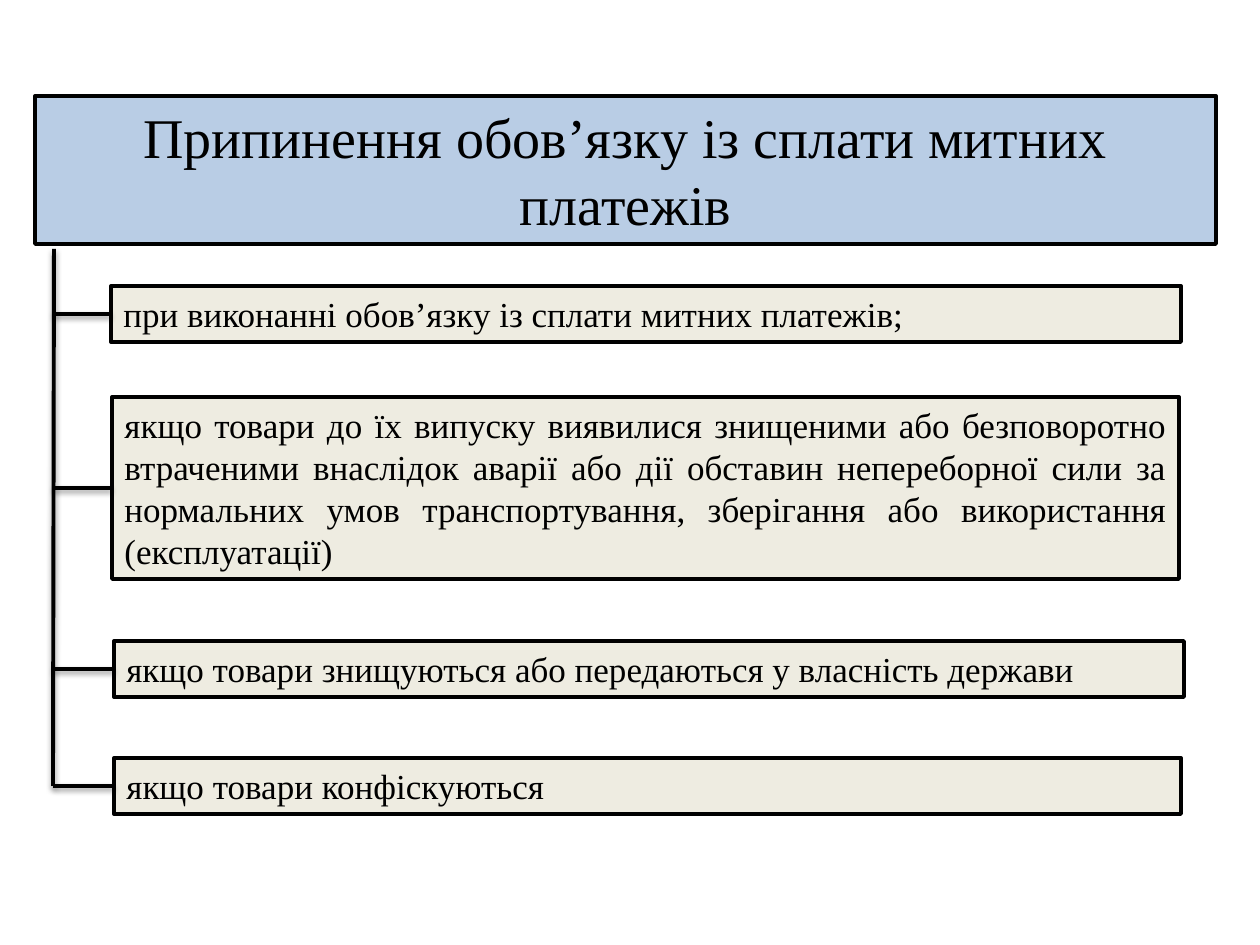
"""Build the slide on how the duty to pay customs charges ends."""
from dataclasses import dataclass

from pptx import Presentation
from pptx import util as u
from pptx.dml import color
from pptx.enum import shapes, text

PX = 914400 / 126


@dataclass(frozen=True)
class Theme:
    font: str = "Times New Roman"
    ink: str = "000000"
    heading_fill: str = "B9CDE5"
    case_fill: str = "EEECE1"
    heading_size: int = 32
    case_size: int = 20
    line_width: float = 2.25


def px(*lengths):
    return [u.Emu(round(length * PX)) for length in lengths]


def rgb(code):
    return color.RGBColor.from_string(code)


def write(frame, wording, *, font, size, ink, align):
    frame.word_wrap = True
    frame.auto_size = text.MSO_AUTO_SIZE.SHAPE_TO_FIT_TEXT
    frame.vertical_anchor = text.MSO_ANCHOR.TOP
    paragraph = frame.paragraphs[0]
    paragraph.alignment = align
    run = paragraph.add_run()
    run.text = wording
    run.font.name = font
    run.font.size = u.Pt(size)
    run.font.color.rgb = rgb(ink)


class Diagram:
    def __init__(self, slide, theme):
        self.slide = slide
        self.theme = theme

    def outline(self, line):
        line.color.rgb = rgb(self.theme.ink)
        line.width = u.Pt(self.theme.line_width)

    def box(self, bounds, wording, fill, size, align):
        box = self.slide.shapes.add_shape(shapes.MSO_SHAPE.RECTANGLE, *px(*bounds))
        box.shadow.inherit = False
        box.fill.solid()
        box.fill.fore_color.rgb = rgb(fill)
        self.outline(box.line)
        write(box.text_frame, wording, font=self.theme.font, size=size,
              ink=self.theme.ink, align=align)
        return box

    def heading(self, bounds, wording):
        return self.box(bounds, wording, self.theme.heading_fill,
                        self.theme.heading_size, text.PP_ALIGN.CENTER)

    def case(self, bounds, wording, align):
        return self.box(bounds, wording, self.theme.case_fill,
                        self.theme.case_size, align)

    def line(self, start, end):
        line = self.slide.shapes.add_connector(
            shapes.MSO_CONNECTOR.STRAIGHT, *px(*start, *end))
        self.outline(line.line)
        return line

    def branch(self, trunk_x, bounds, case):
        left, top, _, height = bounds
        middle = top + height // 2
        self.line((trunk_x, middle), (left, middle)).end_connect(case, 1)


LEFT, JUSTIFY = text.PP_ALIGN.LEFT, text.PP_ALIGN.JUSTIFY
CASES = [
    ((111, 286, 1070, 56), LEFT,
     "при виконанні обов’язку із сплати митних платежів;"),
    ((112, 397, 1067, 182), JUSTIFY,
     "якщо товари до їх випуску виявилися знищеними або безповоротно "
     "втраченими внаслідок аварії або дії обставин непереборної сили за "
     "нормальних умов транспортування, зберігання або використання "
     "(експлуатації)"),
    ((114, 641, 1070, 56), LEFT,
     "якщо товари знищуються або передаються у власність держави"),
    ((114, 758, 1067, 56), LEFT, "якщо товари конфіскуються"),
]


def main():
    deck = Presentation()
    deck.slide_width, deck.slide_height = px(1260, 945)
    diagram = Diagram(deck.slides.add_slide(deck.slide_layouts[6]), Theme())

    diagram.heading((35, 96, 1181, 148),
                    "Припинення обов’язку із сплати митних платежів")
    cases = [diagram.case(bounds, wording, align)
             for bounds, align, wording in CASES]
    diagram.line((54, 249), (53, 786))
    for (bounds, _, _), case in zip(CASES, cases):
        diagram.branch(53, bounds, case)

    deck.save("out.pptx")


if __name__ == "__main__":
    main()
